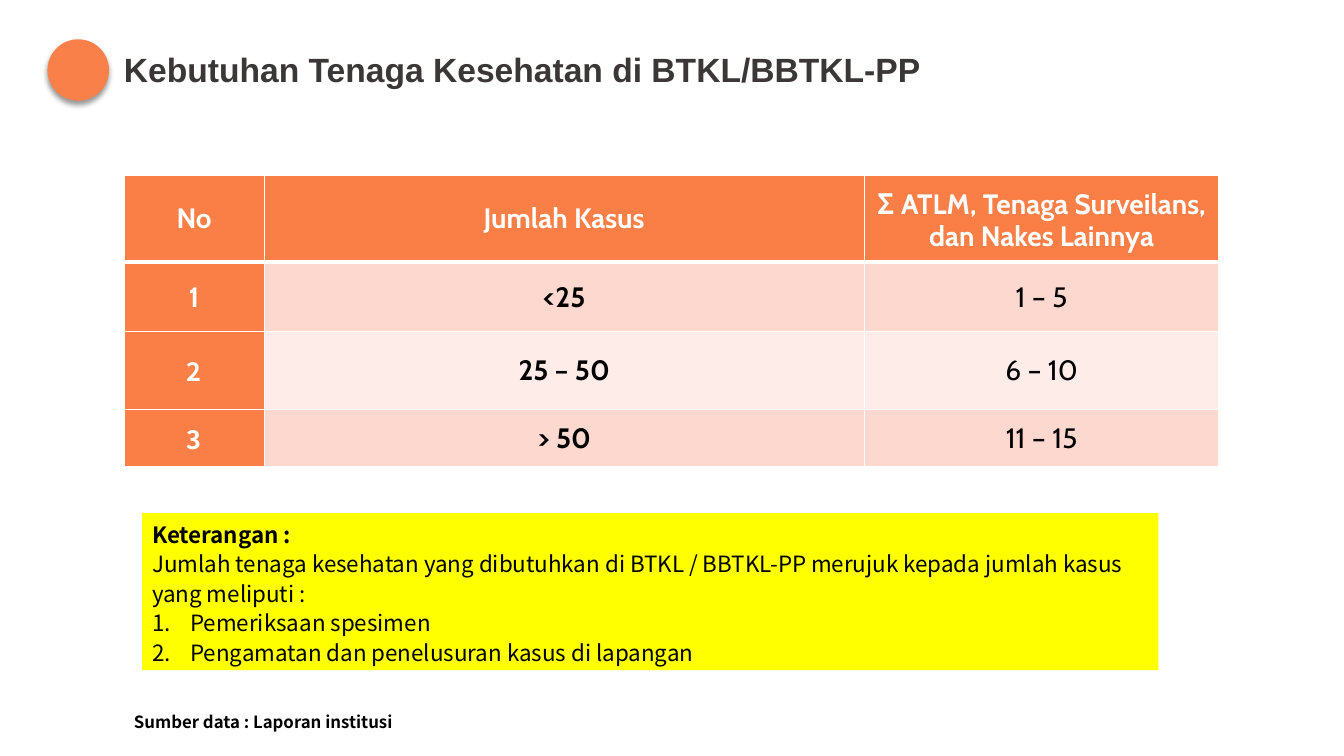
from dataclasses import dataclass

from lxml import etree
from pptx import Presentation
from pptx.dml.color import RGBColor
from pptx.enum.shapes import MSO_SHAPE
from pptx.enum.text import MSO_ANCHOR, PP_ALIGN
from pptx.oxml.ns import qn
from pptx.util import Inches, Pt

CENTER, LEFT = PP_ALIGN.CENTER, PP_ALIGN.LEFT
MIDDLE, TOP = MSO_ANCHOR.MIDDLE, MSO_ANCHOR.TOP
OVAL, RECT = MSO_SHAPE.OVAL, MSO_SHAPE.RECTANGLE
ARIAL, CABIN, NOTO = "Arial", "Cabin", "Noto Sans CJK SC"
ORANGE, YELLOW, WHITE, BLACK, GREY = "F97F47", "FFFF00", "FFFFFF", "000000", "3B3737"
BANDS = ("FDD8CF", "FEECE9")

prs = Presentation()
prs.slide_width, prs.slide_height = Inches(13.33), Inches(7.5)
slide = prs.slides.add_slide(prs.slide_layouts[6])


@dataclass
class Box:
    """Left, top, width and height in percent of the slide."""
    left: float
    top: float
    width: float
    height: float

    def emu(self) -> tuple:
        return across(self.left), down(self.top), across(self.width), down(self.height)


@dataclass
class Case:
    number: str
    cases: str
    staff: str
    number_font: str
    number_size: int


def across(percent: float) -> int:
    return int(prs.slide_width * percent / 100)


def down(percent: float) -> int:
    return int(prs.slide_height * percent / 100)


def rgb(color: str) -> RGBColor:
    return RGBColor.from_string(color)


def add_run(p, text: str, *, size=16, font=NOTO, color=BLACK, bold=False) -> None:
    r = p.add_run()
    r.text = text
    r.font.size, r.font.name, r.font.bold = Pt(size), font, bold
    r.font.color.rgb = rgb(color)


def write(p, text: str, *, align=LEFT, spacing=1.0, gap=0.0, **fmt) -> None:
    p.alignment, p.line_spacing = align, spacing
    p.space_before = p.space_after = Pt(gap)
    add_run(p, text, **fmt)


def add_text(box: Box, text: str, **fmt) -> None:
    tf = slide.shapes.add_textbox(*box.emu()).text_frame
    tf.word_wrap = True
    write(tf.paragraphs[0], text, **fmt)


def add_shape(kind: MSO_SHAPE, box: Box, color: str):
    sp = slide.shapes.add_shape(kind, *box.emu())
    sp.shadow.inherit = False
    sp.fill.solid()
    sp.fill.fore_color.rgb = rgb(color)
    sp.line.fill.background()
    return sp


def add_shadow(sp) -> None:
    effects = sp._element.spPr.find(qn("a:effectLst"))
    shadow = etree.SubElement(effects, qn("a:outerShdw"), blurRad=str(Pt(4)),
                              dist=str(Pt(3)), dir="5400000", rotWithShape="0")
    color = etree.SubElement(shadow, qn("a:srgbClr"), val=BLACK)
    etree.SubElement(color, qn("a:alpha"), val="40000")


def number_item(p) -> None:
    pPr = p._p.get_or_add_pPr()
    pPr.set("marL", str(Inches(0.38)))
    pPr.set("indent", str(Inches(-0.38)))
    etree.SubElement(pPr, qn("a:buFont"), typeface="+mj-lt")
    etree.SubElement(pPr, qn("a:buAutoNum"), type="arabicPeriod")


def style_cell(cell, color: str, bottom: int = 1, top: int = 1) -> None:
    cell.vertical_anchor = MIDDLE
    cell.margin_left = cell.margin_right = cell.margin_top = Inches(0.01)
    cell.margin_bottom = 0
    tcPr = cell._tc.get_or_add_tcPr()
    for side, width in (("lnL", 1), ("lnR", 1), ("lnT", top), ("lnB", bottom)):
        line = etree.SubElement(tcPr, qn(f"a:{side}"), w=str(Pt(width)))
        fill = etree.SubElement(line, qn("a:solidFill"))
        etree.SubElement(fill, qn("a:srgbClr"), val=WHITE)
    cell.fill.solid()
    cell.fill.fore_color.rgb = rgb(color)


# Staffing table
COLUMNS = (10.43, 44.64, 26.41)
ROWS = (11.47, 9.2, 10.27, 7.6)
CASES = (
    Case("1", "<25", "1 – 5", CABIN, 20),
    Case("2", "25 – 50", "6 – 10", NOTO, 18),
    Case("3", "> 50", "11 – 15", NOTO, 18),
)
table_box = Box(9.23, 23.2, sum(COLUMNS), sum(ROWS))
table = slide.shapes.add_table(len(ROWS), len(COLUMNS), *table_box.emu()).table
for column, width in zip(table.columns, COLUMNS):
    column.width = across(width)
for row, height in zip(table.rows, ROWS):
    row.height = down(height)

head = dict(size=20, color=WHITE, bold=True)
for c, (text, font) in enumerate((("No", CABIN), ("Jumlah Kasus", CABIN), ("Σ ", NOTO))):
    style_cell(table.cell(0, c), ORANGE, bottom=3)
    write(table.cell(0, c).text_frame.paragraphs[0], text, align=CENTER,
          spacing=0.9, font=font, **head)
add_run(table.cell(0, 2).text_frame.paragraphs[0],
        "ATLM, Tenaga Surveilans, dan Nakes Lainnya", font=CABIN, **head)

for i, case in enumerate(CASES):
    band = BANDS[i % 2]
    cells = (
        (case.number, ORANGE, dict(font=case.number_font, size=case.number_size,
                                   color=WHITE, bold=True)),
        (case.cases, band, dict(font=CABIN, size=20, bold=True)),
        (case.staff, band, dict(font=CABIN, size=20)),
    )
    for c, (text, color, fmt) in enumerate(cells):
        cell = table.cell(i + 1, c)
        style_cell(cell, color, top=1 if i else 3)
        write(cell.text_frame.paragraphs[0], text, align=CENTER, gap=1.4, **fmt)

# Title with its round marker
add_shadow(add_shape(OVAL, Box(3.53, 5.2, 4.58, 8.13), "F98048"))
add_text(Box(8.48, 4.8, 86.05, 7.87), "Kebutuhan Tenaga Kesehatan di BTKL/BBTKL-PP",
         size=24, font=ARIAL, color=GREY, bold=True, spacing=1.2)

# Explanation
NOTES = (
    ("Keterangan :", True, False),
    ("Jumlah tenaga kesehatan yang dibutuhkan di BTKL / BBTKL-PP merujuk kepada "
     "jumlah kasus yang meliputi :", False, False),
    ("Pemeriksaan spesimen", False, True),
    ("Pengamatan dan penelusuran kasus di lapangan", False, True),
)
tf = add_shape(RECT, Box(10.58, 67.87, 75.62, 20.8), YELLOW).text_frame
tf.word_wrap, tf.vertical_anchor = True, TOP
for i, (text, bold, numbered) in enumerate(NOTES):
    p = tf.add_paragraph() if i else tf.paragraphs[0]
    write(p, text, bold=bold, spacing=1.1)
    if numbered:
        number_item(p)

# Data source
add_text(Box(9.23, 93.47, 32.33, 4), "Sumber data : Laporan institusi", size=12, bold=True)

prs.save("out.pptx")
